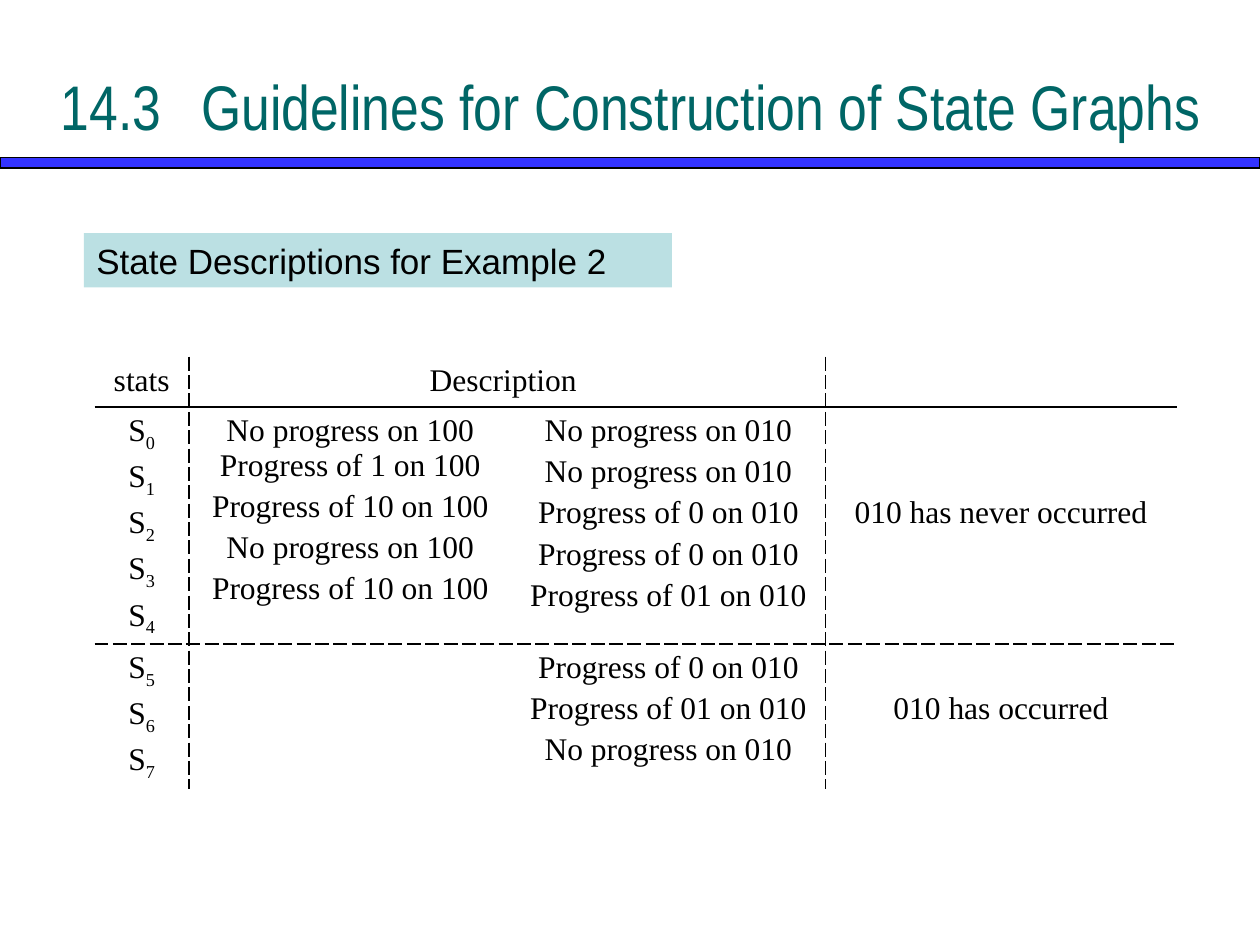
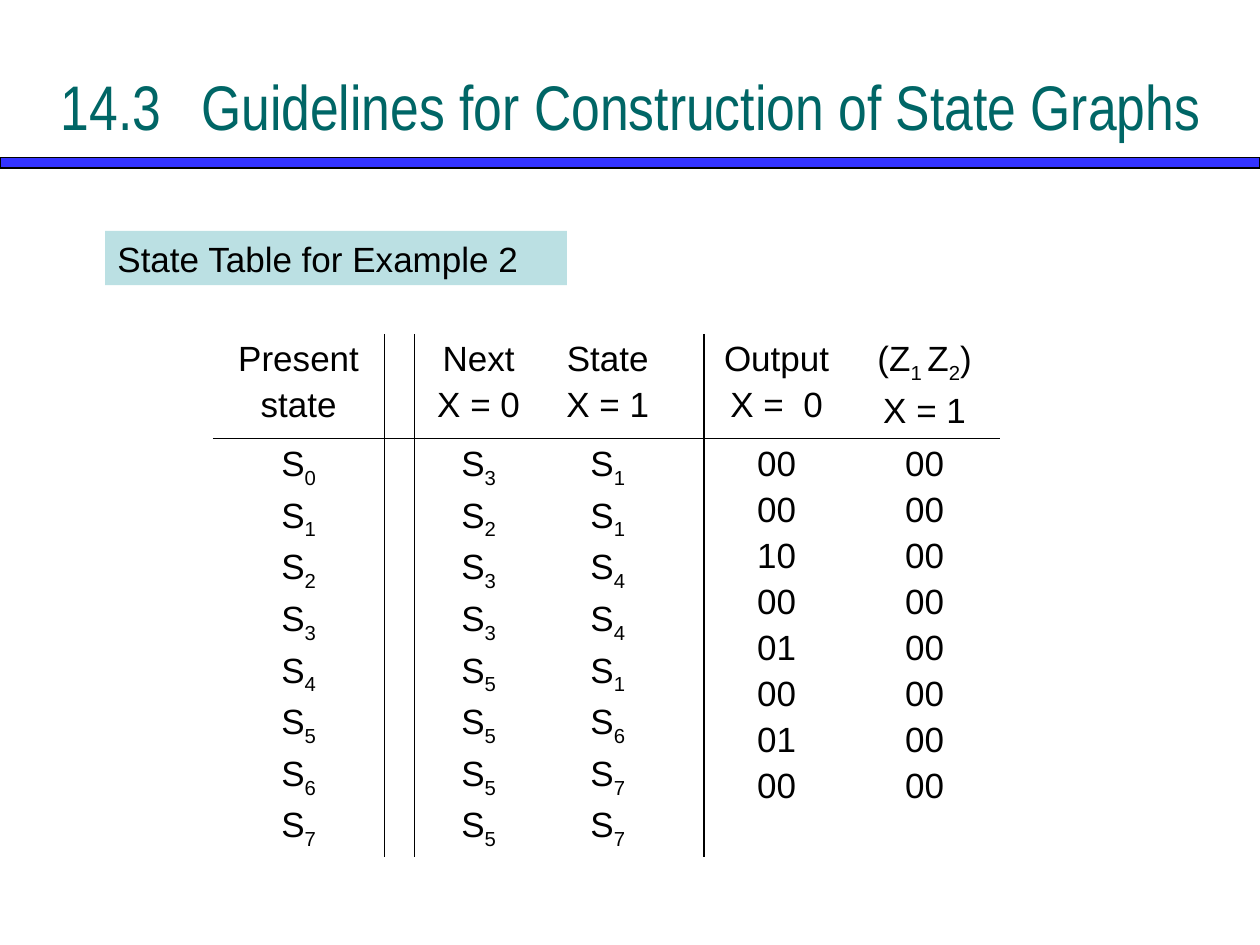
from dataclasses import dataclass, field

from lxml import etree
from pptx import Presentation
from pptx.dml.color import RGBColor
from pptx.enum import shapes, text
from pptx.oxml import ns
from pptx.util import Pt

COLORS = {
    "title": "006666",
    "band": "3333FF",
    "label": "BBE0E3",
    "ink": "000000",
}
TITLE = "14.3\t Guidelines for Construction of State Graphs"
NO_STYLE = "{2D5ABB26-0587-4C30-8999-92F81FD0307C}"
LINE_STEP = 23.5  # one 18 pt table line with its spacing


@dataclass
class Label:
    wording: str
    left: float
    top: float
    width: float
    height: float = 31


@dataclass
class Grid:
    """A ruled table; the rules map a column or row to the dash at its end."""
    left: float
    top: float
    columns: list[float]
    rows: list[float]
    cells: list[list[str]]
    font: str
    size: float
    column_rules: dict[int, str]
    row_rules: dict[int, str]
    merges: list[tuple[int, int, int, int]] = field(default_factory=list)
    lines_down: dict[tuple[int, int], int] = field(default_factory=dict)


def rgb(name: str) -> RGBColor:
    return RGBColor.from_string(COLORS[name])


def write(frame, content: str, *, font: str = "Arial", size: float = 20,
          color: str = "ink", align=text.PP_ALIGN.CENTER, before: float = 0,
          anchor=text.MSO_ANCHOR.TOP) -> None:
    """Fill a frame line by line; every second part between bars is subscript."""
    frame.word_wrap = True
    frame.vertical_anchor = anchor
    for number, line in enumerate(content.split("\n")):
        paragraph = frame.add_paragraph() if number else frame.paragraphs[0]
        paragraph.alignment = align
        paragraph.space_before = Pt(before)
        if not line:
            ending = paragraph._p.get_or_add_endParaRPr()
            ending.set("sz", str(int(size * 100)))
            etree.SubElement(ending, ns.qn("a:latin"), typeface=font)
            continue
        for index, part in enumerate(line.split("|")):
            run = paragraph.add_run()
            run.text = part
            run.font.name = font
            run.font.size = Pt(size)
            run.font.color.rgb = rgb(color)
            if index % 2:
                run._r.get_or_add_rPr().set("baseline", "-25000")


def add_box(slide, left: float, top: float, width: float, height: float, fill: str):
    box = slide.shapes.add_shape(shapes.MSO_SHAPE.RECTANGLE,
                                 Pt(left), Pt(top), Pt(width), Pt(height))
    box.shadow.inherit = False
    box.fill.solid()
    box.fill.fore_color.rgb = rgb(fill)
    box.line.fill.background()
    return box


def add_band(slide, layout) -> None:
    """Draw the blue band and hand it to the layout that all slides share."""
    band = add_box(slide, 0, 90, 720, 6, "band")
    band.line.color.rgb = rgb("ink")
    band.line.width = Pt(0.75)
    layout.shapes.element.append(band.element)


def add_label(slide, label: Label) -> None:
    box = add_box(slide, label.left, label.top, label.width, label.height, "label")
    write(box.text_frame, label.wording, align=text.PP_ALIGN.LEFT)


def set_border(cell, side: str, dash: str | None) -> None:
    line = etree.SubElement(cell._tc.get_or_add_tcPr(), ns.qn(f"a:ln{side}"), w=str(Pt(1)))
    if dash is None:
        etree.SubElement(line, ns.qn("a:noFill"))
        return
    fill = etree.SubElement(line, ns.qn("a:solidFill"))
    etree.SubElement(fill, ns.qn("a:srgbClr"), val=COLORS["ink"])
    etree.SubElement(line, ns.qn("a:prstDash"), val=dash)


def add_grid(slide, grid: Grid) -> None:
    frame = slide.shapes.add_table(len(grid.rows), len(grid.columns), Pt(grid.left),
                                   Pt(grid.top), Pt(sum(grid.columns)), Pt(sum(grid.rows)))
    table = frame.table
    table.first_row = table.horz_banding = False
    table._tbl.tblPr.find(ns.qn("a:tableStyleId")).text = NO_STYLE
    for column, width in zip(table.columns, grid.columns):
        column.width = Pt(width)
    for row, height in zip(table.rows, grid.rows):
        row.height = Pt(height)
    for r, contents in enumerate(grid.cells):
        for c, content in enumerate(contents):
            cell = table.cell(r, c)
            set_border(cell, "L", grid.column_rules.get(c - 1))
            set_border(cell, "R", grid.column_rules.get(c))
            set_border(cell, "T", grid.row_rules.get(r - 1))
            set_border(cell, "B", grid.row_rules.get(r))
            cell.fill.background()
            cell.margin_top = Pt(3.6 + LINE_STEP * grid.lines_down.get((r, c), 0))
            write(cell.text_frame, content, font=grid.font, size=grid.size,
                  before=grid.size * 0.2)
    for top, left, bottom, right in grid.merges:
        table.cell(top, left).merge(table.cell(bottom, right))


def lines(*items: str) -> str:
    return "\n".join(items)


def states(digits: str) -> str:
    return lines(*(f"S|{digit}" for digit in digits))


DESCRIPTIONS = Grid(
    left=54, top=203.8,
    columns=[54, 184.3, 179.3, 200.9], rows=[28.8, 132.5, 80.6],
    cells=[
        ["stats", "Description ", "", ""],
        [states("01234"),
         lines("No progress on 100 Progress of 1 on 100", "Progress of 10 on 100",
               "No progress on 100", "Progress of 10 on 100"),
         lines("No progress on 010", "No progress on 010", "Progress of 0 on 010",
               "Progress of 0 on 010", "Progress of 01 on 010"),
         "010 has never occurred"],
        [states("567"), "",
         lines("Progress of 0 on 010", "Progress of 01 on 010", "No progress on 010"),
         "010 has occurred"],
    ],
    font="Times New Roman", size=18,
    column_rules={0: "lgDash", 2: "lgDash"}, row_rules={0: "solid", 1: "lgDash"},
    merges=[(0, 1, 0, 2)], lines_down={(1, 3): 2, (2, 3): 1},
)

STATE_TABLE = Grid(
    left=121.7, top=190.8,
    columns=[97.9, 16.6, 73.4, 74.2, 18, 82.8, 86.4], rows=[59.8, 232.6],
    cells=[
        [lines("Present", "state"), "", lines("Next", "X = 0"), lines("State", "X = 1"), "",
         lines("Output", "X =  0"), lines("(Z|1 |Z|2|)", "X = 1")],
        [states("01234567"), "", states("32335555"), states("11441677"), "",
         lines("00", "00", "10", "00", "01", "00", "01", "00"), lines(*["00"] * 8)],
    ],
    font="Arial", size=20,
    column_rules={0: "solid", 1: "solid", 4: "solid"}, row_rules={0: "solid"},
)

PAGES = [
    (Label("State Descriptions for Example 2", 48, 133.2, 336), DESCRIPTIONS),
    (Label("State Table for Example 2", 60, 132, 264), STATE_TABLE),
]


def main() -> None:
    deck = Presentation()
    deck.slide_width, deck.slide_height = Pt(720), Pt(540)
    layout = deck.slide_layouts.get_by_name("Title Only")
    for number, (label, grid) in enumerate(PAGES):
        slide = deck.slides.add_slide(layout)
        if number == 0:
            add_band(slide, layout)
        title = slide.shapes.title
        title.left, title.top, title.width, title.height = Pt(14.4), Pt(15.1), Pt(692), Pt(90)
        title.text_frame.auto_size = text.MSO_AUTO_SIZE.NONE
        write(title.text_frame, TITLE, font="Arial Narrow", size=36, color="title",
              anchor=text.MSO_ANCHOR.MIDDLE)
        add_grid(slide, grid)
        add_label(slide, label)
    deck.save("out.pptx")


if __name__ == "__main__":
    main()
